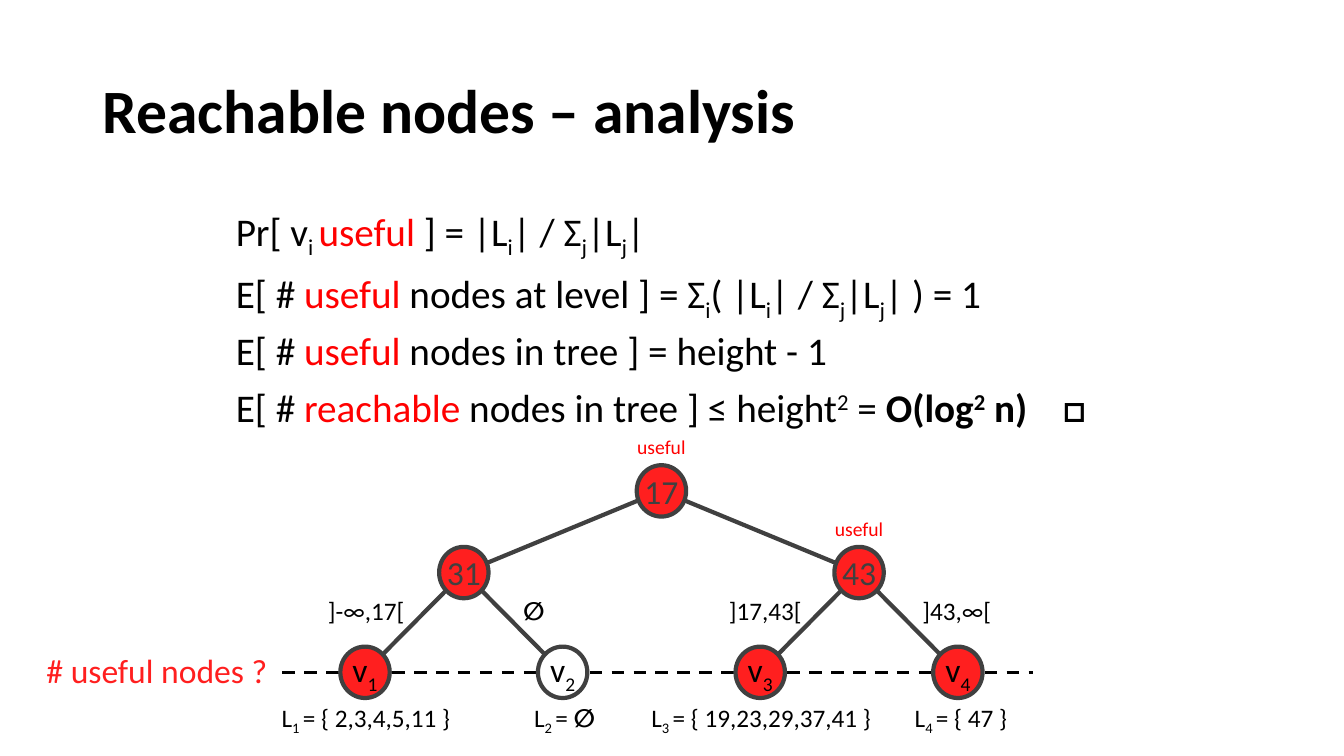
from lxml import etree
from pptx import Presentation
from pptx.dml.color import RGBColor
from pptx.enum.dml import MSO_LINE
from pptx.enum.shapes import MSO_CONNECTOR, MSO_SHAPE
from pptx.enum.text import MSO_ANCHOR, MSO_AUTO_SIZE, PP_ALIGN
from pptx.oxml.ns import qn
from pptx.util import Inches, Pt

DASH, STRAIGHT, OVAL = MSO_LINE.DASH, MSO_CONNECTOR.STRAIGHT, MSO_SHAPE.OVAL
LEFT, CENTER, RIGHT = PP_ALIGN.LEFT, PP_ALIGN.CENTER, PP_ALIGN.RIGHT
TOP, MIDDLE, NO_FIT = MSO_ANCHOR.TOP, MSO_ANCHOR.MIDDLE, MSO_AUTO_SIZE.NONE

BLACK = RGBColor(0, 0, 0)
WHITE = RGBColor(0xFF, 0xFF, 0xFF)
RED = RGBColor(0xFF, 0, 0)
NODE_RED = RGBColor(0xFF, 0x1F, 0x1F)
GREY = RGBColor(0x40, 0x40, 0x40)
FONT = "Calibri"

# Content: a run is its text followed by style marks
TITLE = "Reachable nodes – analysis"
SUM_J = [("| / Σ",), ("j", "sub"), ("|L",), ("j", "sub")]
FORMULAS = [
    [("Pr[ v",), ("i ", "sub"), ("useful", "red"), (" ] = |L",), ("i", "sub"),
     *SUM_J, ("|",)],
    [("E[ # ",), ("useful ", "red"), ("nodes at level ] = Σ",), ("i", "sub"),
     ("( |L",), ("i", "sub"), *SUM_J, ("| ) = 1",)],
    [("E[ # ",), ("useful ", "red"), ("nodes in tree ] = height - 1",)],
    [("E[ # ",), ("reachable ", "red"), ("nodes in tree ] ≤ height",),
     ("2", "sup"), (" = ",), ("O(log", "bold"), ("2", "bold", "sup"),
     (" n)\t□", "bold")],
]
# Tree nodes: name -> (column, level, fill, text colour, runs)
NODES = {
    "root": (3, 0, NODE_RED, GREY, [("17",)]),
    "left": (1, 1, NODE_RED, GREY, [("31",)]),
    "right": (5, 1, NODE_RED, GREY, [("43",)]),
    "v1": (0, 2, NODE_RED, BLACK, [("v",), ("1", "sub")]),
    "v2": (2, 2, WHITE, BLACK, [("v",), ("2", "sub")]),
    "v3": (4, 2, NODE_RED, BLACK, [("v",), ("3", "sub")]),
    "v4": (6, 2, NODE_RED, BLACK, [("v",), ("4", "sub")]),
}
EDGES = [("root", "left"), ("root", "right"), ("left", "v1"),
         ("left", "v2"), ("right", "v3"), ("right", "v4")]
USEFUL = ["root", "right"]
# Intervals: side that meets the edge, its x, alignment, runs
INTERVALS = [
    (4.11, RIGHT, [("]-∞,17[",)]),
    (5.09, LEFT, [("∅", "bold")]),
    (8.05, RIGHT, [("]17,43[",)]),
    (9.05, LEFT, [("]43,∞[",)]),
]
# Lists below the leaves: centre x, runs after the index
LISTS = [
    (3.63, [("= { 2,3,4,5,11 }",)]),
    (5.6, [("=",), (" ∅", "bold")]),
    (7.55, [("= { 19,23,29,37,41 }",)]),
    (9.53, [("= { 47 }",)]),
]

# Grid of the tree
COL_0, COL_STEP = 3.62, 0.98
LEVELS = [4.87, 5.68, 6.67]
NODE_W, NODE_H = 0.49, 0.51
MARKS = {"sub": "-25000", "sup": "30000"}

prs = Presentation()
prs.slide_width, prs.slide_height = Inches(13.33), Inches(7.5)
s = prs.slides.add_slide(prs.slide_layouts[5])


def centre(name):
    col, level = NODES[name][:2]
    return COL_0 + col * COL_STEP, LEVELS[level]


def add_runs(p, runs, size, color, align):
    p.alignment = align
    for text, *marks in runs:
        r = p.add_run()
        r.text = text
        fmt = {"name": FONT, "size": Pt(size), "bold": "bold" in marks}
        for key, value in fmt.items():
            setattr(r.font, key, value)
        r.font.color.rgb = RED if "red" in marks else color
        for mark in marks:
            if mark in MARKS:
                r.font._element.set("baseline", MARKS[mark])


def add_text(x, y, w, h, runs, size, color, align):
    tf = s.shapes.add_textbox(*map(Inches, (x, y, w, h))).text_frame
    tf.word_wrap = True
    add_runs(tf.paragraphs[0], runs, size, color, align)
    return tf


def add_line(start, end, color, width):
    line = s.shapes.add_connector(STRAIGHT, *map(Inches, (*start, *end)))
    line.line.color.rgb = color
    line.line.width = Pt(width)
    etree.SubElement(line._element.spPr, qn("a:effectLst"))
    return line


# Title
sp = s.shapes.title
sp.left, sp.top, sp.width, sp.height = map(Inches, (0.92, 0.4, 12.06, 1.45))
tf = sp.text_frame
for key, value in {"vertical_anchor": MIDDLE, "auto_size": NO_FIT}.items():
    setattr(tf, key, value)
tf.paragraphs[0].line_spacing = 0.9
add_runs(tf.paragraphs[0], [(TITLE, "bold")], 44, BLACK, LEFT)

# Formulas
tf = add_text(2.24, 2.01, 9.15, 2.21, FORMULAS[0], 28, BLACK, LEFT)
tf.vertical_anchor = TOP
for runs in FORMULAS[1:]:
    add_runs(tf.add_paragraph(), runs, 28, BLACK, LEFT)
for p in tf.paragraphs:
    p.line_spacing, p.space_before = 0.9, Pt(10)
tabs = etree.SubElement(tf.paragraphs[-1]._p.get_or_add_pPr(), qn("a:tabLst"))
etree.SubElement(tabs, qn("a:tab"), pos=str(Inches(8.2)), algn="l")

# Level line and tree edges
add_line((2.8, LEVELS[2]), (10.25, LEVELS[2]), BLACK, 2.25).line.dash_style = DASH
for parent, child in EDGES:
    add_line(centre(child), centre(parent), GREY, 3)

# Tree nodes
for name, (_, _, fill, color, runs) in NODES.items():
    x, y = centre(name)
    sp = s.shapes.add_shape(OVAL, *map(Inches, (
        x - NODE_W / 2, y - NODE_H / 2, NODE_W, NODE_H)))
    sp.shadow.inherit = False
    sp.fill.solid()
    sp.fill.fore_color.rgb = fill
    sp.line.color.rgb = GREY
    sp.line.width = Pt(3)
    tf = sp.text_frame
    for key in ("margin_left", "margin_right", "margin_top", "margin_bottom"):
        setattr(tf, key, 0)
    tf.vertical_anchor, tf.word_wrap = MIDDLE, False
    add_runs(tf.paragraphs[0], runs, 24, color, CENTER)

# Labels around the tree
for name in USEFUL:
    x, y = centre(name)
    add_text(x - 0.45, y - 0.6, 0.9, 0.34, [("useful",)], 14, RED, CENTER)
for x, align, runs in INTERVALS:
    add_text(x - 1.24 if align == RIGHT else x, 5.86, 1.24, 0.4,
             runs, 18, BLACK, align)
for i, (x, runs) in enumerate(LISTS, 1):
    add_text(x - 1.25, 6.92, 2.5, 0.4,
             [("L",), (f"{i} ", "sub"), *runs], 18, BLACK, CENTER)
add_text(0.25, 6.4, 2.5, 0.5, [("# useful nodes ?",)], 24, NODE_RED, RIGHT)

prs.save("out.pptx")
